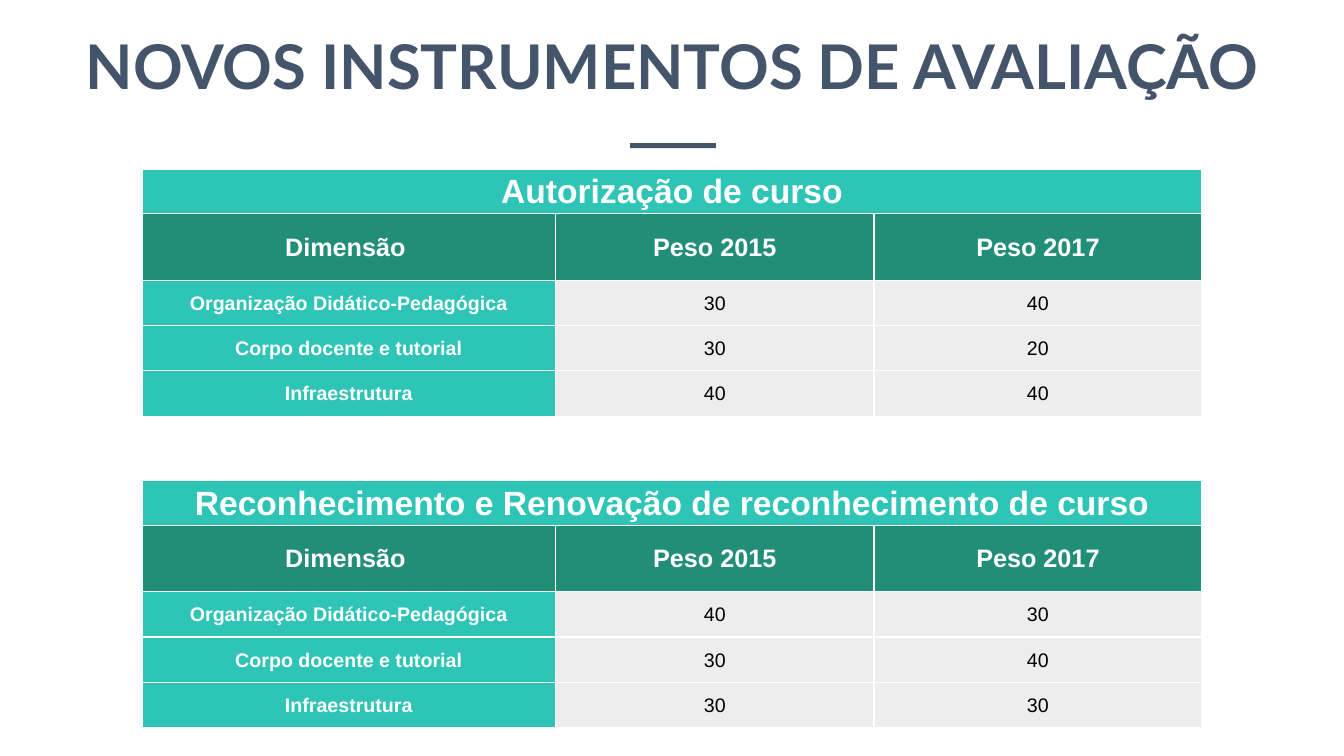
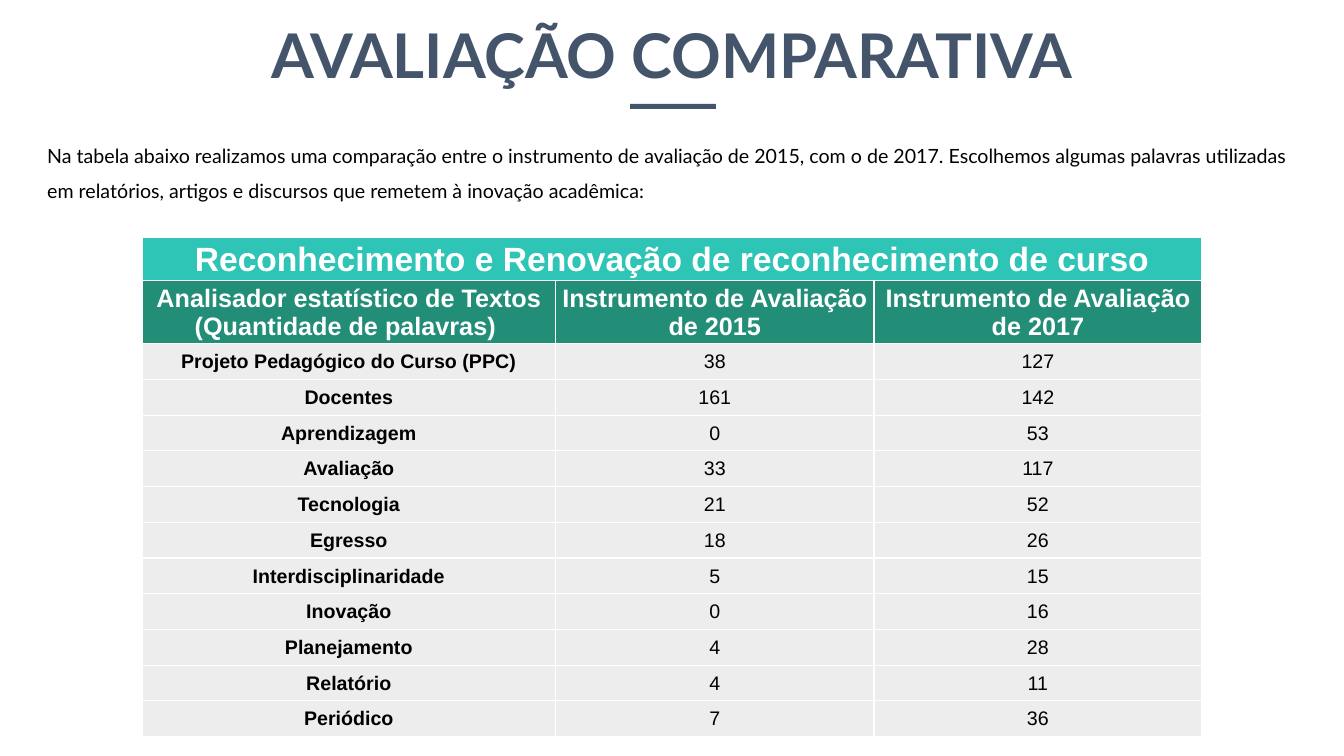
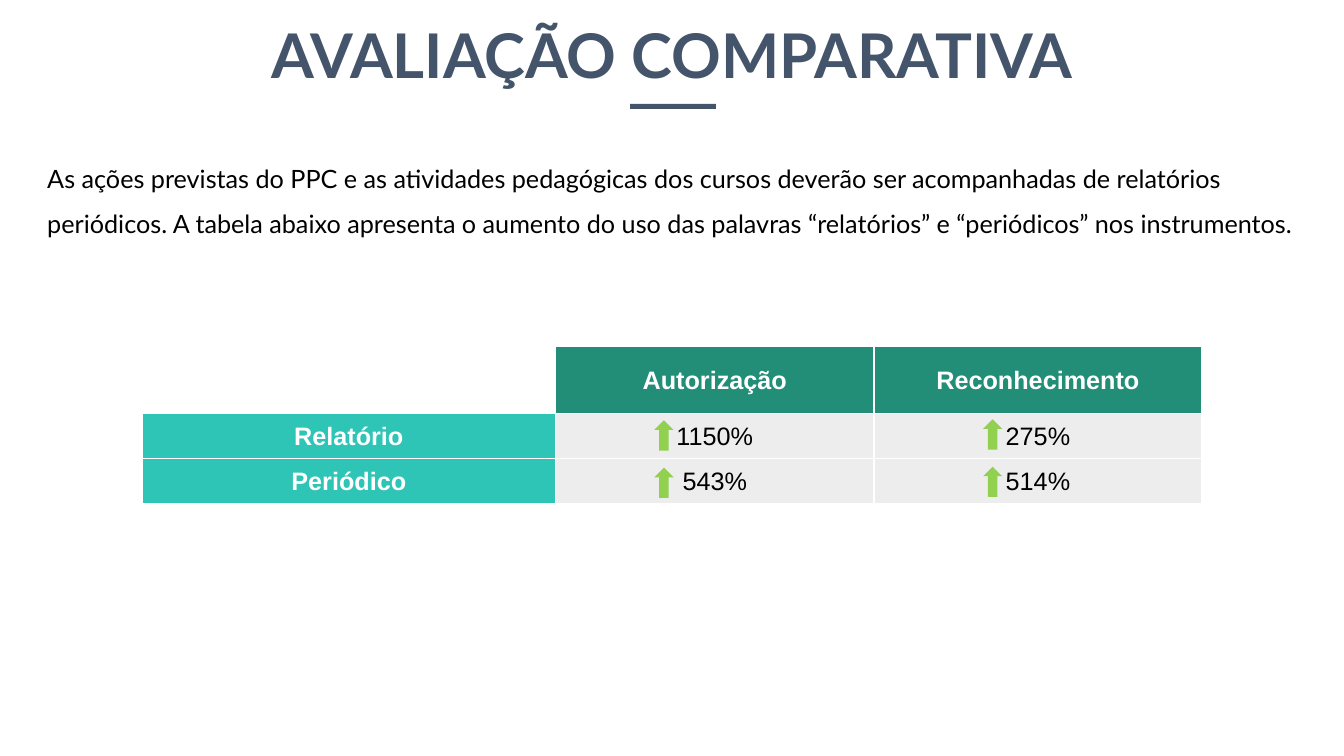
"""Build three slides comparing the weights and wording of course evaluation instruments."""
from dataclasses import dataclass

from pptx import Presentation
from pptx.dml.color import RGBColor
from pptx.enum.shapes import MSO_SHAPE as Shape
from pptx.enum.text import MSO_ANCHOR as Anchor, PP_ALIGN as Align
from pptx.oxml import parse_xml
from pptx.oxml.ns import nsdecls
from pptx.util import Inches, Pt


@dataclass(frozen=True)
class Theme:
    title_font: str = "Lato"
    table_font: str = "Arial"
    slate: str = "44546A"
    teal: str = "2EC4B6"
    green: str = "228E77"
    gray: str = "EDEDED"
    lime: str = "92D050"
    white: str = "FFFFFF"
    black: str = "000000"
    title_size: int = 44
    caption_size: int = 24
    header_size: int = 18
    body_size: int = 14


theme = Theme()
COLUMN_WIDTHS = (4.1, 3.16, 3.25)
TABLE_LEFT = 1.41
CELL_MARGINS = {"margin_left": 0.01, "margin_top": 0.01, "margin_right": 0.01, "margin_bottom": 0}
TITLE_MARGINS = {"margin_left": 0.05, "margin_top": 0.02, "margin_right": 0.05, "margin_bottom": 0.02}


def write_text(frame, text, color, **font_values):
    """Write one run in the first paragraph of a text frame and return the paragraph."""
    paragraph = frame.paragraphs[0]
    run = paragraph.add_run()
    run.text = text
    run.font.color.rgb = RGBColor.from_string(color)
    for name, value in font_values.items():
        setattr(run.font, name, value)
    return paragraph


def add_table(slide, top, height, head_heights, rows, label_fill, label_color, body_size):
    """Add a weight table: head rows of given heights, then body rows sharing the rest."""
    body_height = (height - sum(head_heights)) / (len(rows) - len(head_heights))
    table = slide.shapes.add_table(
        len(rows), len(COLUMN_WIDTHS), Inches(TABLE_LEFT), Inches(top),
        Inches(sum(COLUMN_WIDTHS)), Inches(height)).table
    table.first_row = table.horz_banding = False
    for column, width in zip(table.columns, COLUMN_WIDTHS):
        column.width = Inches(width)
    for row_index, values in enumerate(rows):
        is_head = row_index < len(head_heights)
        is_caption = len(values) == 1
        table.rows[row_index].height = Inches(head_heights[row_index] if is_head else body_height)
        if is_caption:
            table.cell(row_index, 0).merge(table.cell(row_index, len(COLUMN_WIDTHS) - 1))
        for column_index in range(len(COLUMN_WIDTHS)):
            cell = table.cell(row_index, column_index)
            text = values[column_index] if column_index < len(values) else ""
            is_label = column_index == 0
            if is_caption:
                fill, color, size = theme.teal, theme.white, theme.caption_size
            elif is_head:
                fill, color, size = theme.green, theme.white, theme.header_size
            elif is_label:
                fill, color, size = label_fill, label_color, body_size
            else:
                fill, color, size = theme.gray, theme.black, body_size
            if not text and not is_caption:
                fill = theme.white
            for side in ("L", "R", "T", "B"):
                cell._tc.get_or_add_tcPr().append(parse_xml(
                    f'<a:ln{side} {nsdecls("a")} w="12700"><a:solidFill>'
                    f'<a:srgbClr val="{theme.white}"/></a:solidFill></a:ln{side}>'))
            cell.fill.solid()
            cell.fill.fore_color.rgb = RGBColor.from_string(fill)
            cell.vertical_anchor = Anchor.MIDDLE
            for name, value in CELL_MARGINS.items():
                setattr(cell, name, Inches(value))
            if text:
                paragraph = write_text(cell.text_frame, text, color, size=Pt(size),
                                       name=theme.table_font, bold=is_head or is_label)
                paragraph.alignment = Align.CENTER


weight_header = ("Dimensão ", "Peso 2015", "Peso 2017")
dimensions = ("Organização Didático-Pedagógica", "Corpo docente e tutorial", "Infraestrutura")
recognition = "Reconhecimento e Renovação de reconhecimento de curso"
weight_tables = (
    (1.68, "Autorização de curso", (("30", "40"), ("30", "20"), ("40", "40"))),
    (4.77, recognition, (("40", "30"), ("30", "40"), ("30", "30"))),
)
word_rows = (
    (recognition,),
    ("Analisador estatístico de Textos (Quantidade de palavras) ",
     "Instrumento de Avaliação de 2015", "Instrumento de Avaliação de 2017"),
    ("Projeto Pedagógico do Curso (PPC)", "38", "127"),
    ("Docentes", "161", "142"),
    ("Aprendizagem", "0", "53"),
    ("Avaliação", "33", "117"),
    ("Tecnologia", "21", "52"),
    ("Egresso", "18", "26"),
    ("Interdisciplinaridade", "5", "15"),
    ("Inovação", "0", "16"),
    ("Planejamento", "4", "28"),
    ("Relatório", "4", "11"),
    ("Periódico", "7", "36"),
)
growth_rows = (
    ("", "Autorização", "Reconhecimento"),
    ("Relatório", "1150%", "275%"),
    ("Periódico", "543%", "514%"),
)
words_intro = (
    "Na tabela abaixo realizamos uma comparação entre o instrumento de avaliação de 2015, "
    "com o de 2017. Escolhemos algumas palavras utilizadas em relatórios, artigos e discursos "
    "que remetem à inovação acadêmica:")
growth_intro = (
    "As ações previstas do PPC e as atividades pedagógicas dos cursos deverão ser acompanhadas "
    "de relatórios periódicos. A tabela abaixo apresenta o aumento do uso das palavras "
    "“relatórios” e “periódicos” nos instrumentos.")

presentation = Presentation()
presentation.slide_width = Inches(13.33)
presentation.slide_height = Inches(7.5)

slides = []
for title, title_top, title_width, bar_top in (
        ("NOVOS INSTRUMENTOS DE AVALIAÇÃO", 0.26, 11.82, 1.42),
        ("AVALIAÇÃO COMPARATIVA", 0.15, 8.1, 1.03),
        ("AVALIAÇÃO COMPARATIVA", 0.15, 8.1, 1.03)):
    slide = presentation.slides.add_slide(presentation.slide_layouts[6])
    slides.append(slide)
    title_box = slide.shapes.add_textbox(Inches(6.67 - title_width / 2), Inches(title_top),
                                         Inches(title_width), Inches(0.79))
    title_box.text_frame.word_wrap = False
    for name, value in TITLE_MARGINS.items():
        setattr(title_box.text_frame, name, Inches(value))
    paragraph = write_text(title_box.text_frame, title, theme.slate, size=Pt(theme.title_size),
                           name=theme.title_font, bold=True)
    paragraph.alignment = Align.CENTER
    bar = slide.shapes.add_shape(Shape.RECTANGLE, Inches(6.25), Inches(bar_top),
                                 Inches(0.85), Inches(0.05))
    bar.shadow.inherit = False
    bar.fill.solid()
    bar.fill.fore_color.rgb = RGBColor.from_string(theme.slate)
    bar.line.fill.background()

weights_slide, words_slide, growth_slide = slides

for slide, text, top, height, size in (
        (words_slide, words_intro, 1.26, 0.76, theme.body_size),
        (growth_slide, growth_intro, 1.42, 1.86, theme.header_size)):
    intro_box = slide.shapes.add_textbox(Inches(0.37), Inches(top), Inches(12.59), Inches(height))
    intro_box.text_frame.word_wrap = True
    paragraph = write_text(intro_box.text_frame, text, theme.black, size=Pt(size),
                           name=theme.title_font)
    paragraph.line_spacing = 1.5

for top, caption, weights in weight_tables:
    rows = [(caption,), weight_header]
    rows += [(dimension, *pair) for dimension, pair in zip(dimensions, weights)]
    add_table(weights_slide, top, 2.45, (0.44, 0.66), rows,
              theme.teal, theme.white, theme.body_size)
add_table(words_slide, 2.36, 4.95, (0.42, 0.63), word_rows,
          theme.gray, theme.black, theme.body_size)
add_table(growth_slide, 3.44, 1.56, (0.66,), growth_rows,
          theme.teal, theme.white, theme.header_size)

for left, first_top in ((6.49, 4.17), (9.75, 4.16)):
    for row_index in range(2):
        arrow = growth_slide.shapes.add_shape(
            Shape.UP_ARROW, Inches(left), Inches(first_top + row_index * 0.47),
            Inches(0.19), Inches(0.3))
        arrow.shadow.inherit = False
        arrow.fill.solid()
        arrow.fill.fore_color.rgb = RGBColor.from_string(theme.lime)
        arrow.line.fill.background()

presentation.save("out.pptx")
